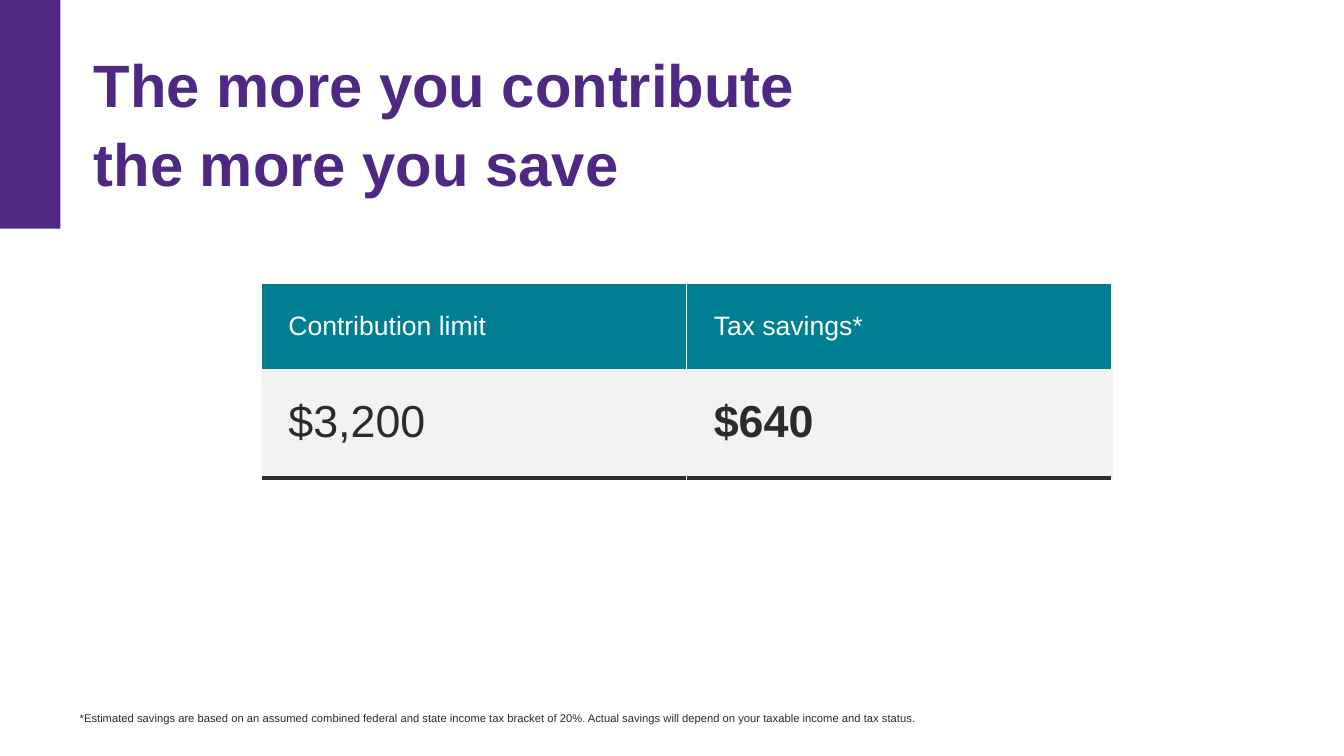
from dataclasses import dataclass

from lxml import etree
from pptx import Presentation
from pptx.dml.color import RGBColor
from pptx.enum import shapes, text
from pptx.oxml import ns
from pptx.util import Inches, Pt


@dataclass(frozen=True)
class Theme:
    font: str = "Arial"
    purple: str = "4F2883"
    teal: str = "007F93"
    grey: str = "F2F2F2"
    white: str = "FFFFFF"
    ink: str = "2A2C2C"
    title_size: float = 42.7
    header_size: float = 19
    amount_size: float = 32
    footnote_size: float = 8


THEME = Theme()


def style(paragraph, size, colour, bold=False):
    font = paragraph.font
    font.name, font.size, font.bold = THEME.font, Pt(size), bold
    font.color.rgb = RGBColor.from_string(colour)


def add_accent_bar(slide, left, top, width, height):
    bar = slide.shapes.add_shape(
        shapes.MSO_SHAPE.RECTANGLE, Inches(left), Inches(top), Inches(width), Inches(height))
    bar.shadow.inherit = False
    bar.fill.solid()
    bar.fill.fore_color.rgb = RGBColor.from_string(THEME.purple)
    bar.line.fill.background()


def add_text(slide, box, wording, size, colour, line_spacing, bold=False):
    frame = slide.shapes.add_textbox(*map(Inches, box)).text_frame
    frame.word_wrap = True
    frame.margin_left = frame.margin_top = frame.margin_right = frame.margin_bottom = 0
    paragraph = frame.paragraphs[0]
    paragraph.text = wording
    paragraph.line_spacing = line_spacing
    style(paragraph, size, colour, bold)


def set_borders(cell, side_colour, bottom_colour, bottom_width):
    """Draw 1 pt sides and top, and the given bottom rule."""
    properties = cell._tc.get_or_add_tcPr()
    edges = [(side, side_colour, 1) for side in "LRT"] + [("B", bottom_colour, bottom_width)]
    for position, (side, colour, width) in enumerate(edges):
        line = etree.Element(ns.qn(f"a:ln{side}"), w=str(Pt(width)))
        fill = etree.SubElement(line, ns.qn("a:solidFill"))
        etree.SubElement(fill, ns.qn("a:srgbClr"), val=colour)
        properties.insert(position, line)


def fill_cell(cell, wording, size, colour, background, anchor, bold=False):
    cell.margin_left = cell.margin_top = cell.margin_right = cell.margin_bottom = Inches(0.27)
    cell.vertical_anchor = anchor
    cell.fill.solid()
    cell.fill.fore_color.rgb = RGBColor.from_string(background)
    paragraph = cell.text_frame.paragraphs[0]
    paragraph.text = wording
    style(paragraph, size, colour, bold)


def add_savings_table(slide, left, top, width, row_heights):
    columns = [("Contribution limit", "$3,200", False), ("Tax savings*", "$640", True)]
    table = slide.shapes.add_table(
        len(row_heights), len(columns), Inches(left), Inches(top),
        Inches(width), Inches(sum(row_heights))).table
    table.horz_banding = table.first_row = False
    for row, height in zip(table.rows, row_heights):
        row.height = Inches(height)
    for index, (heading, amount, bold) in enumerate(columns):
        header, value = table.cell(0, index), table.cell(1, index)
        fill_cell(header, heading, THEME.header_size, THEME.white, THEME.teal,
                  text.MSO_ANCHOR.MIDDLE)
        set_borders(header, THEME.white, THEME.grey, 1)
        fill_cell(value, amount, THEME.amount_size, THEME.ink, THEME.grey,
                  text.MSO_ANCHOR.TOP, bold)
        set_borders(value, THEME.grey, THEME.ink, 3)


def add_savings_slide(deck):
    slide = deck.slides.add_slide(deck.slide_layouts[6])
    add_accent_bar(slide, 0, 0, 0.6, 2.27)
    add_text(slide, (0.93, 0.4, 7.42, 1.52), "The more you contribute the more you save",
             THEME.title_size, THEME.purple, 1.1, bold=True)
    add_savings_table(slide, 2.59, 2.81, 8.44, (0.84, 1.07))
    add_text(slide, (0.79, 7.02, 11.75, 0.16),
             "*Estimated savings are based on an assumed combined federal and state income tax "
             "bracket of 20%. Actual savings will depend on your taxable income and tax status.",
             THEME.footnote_size, THEME.ink, 1.3)


def main():
    deck = Presentation()
    deck.slide_width, deck.slide_height = Inches(13.33), Inches(7.5)
    add_savings_slide(deck)
    deck.save("out.pptx")


if __name__ == "__main__":
    main()
